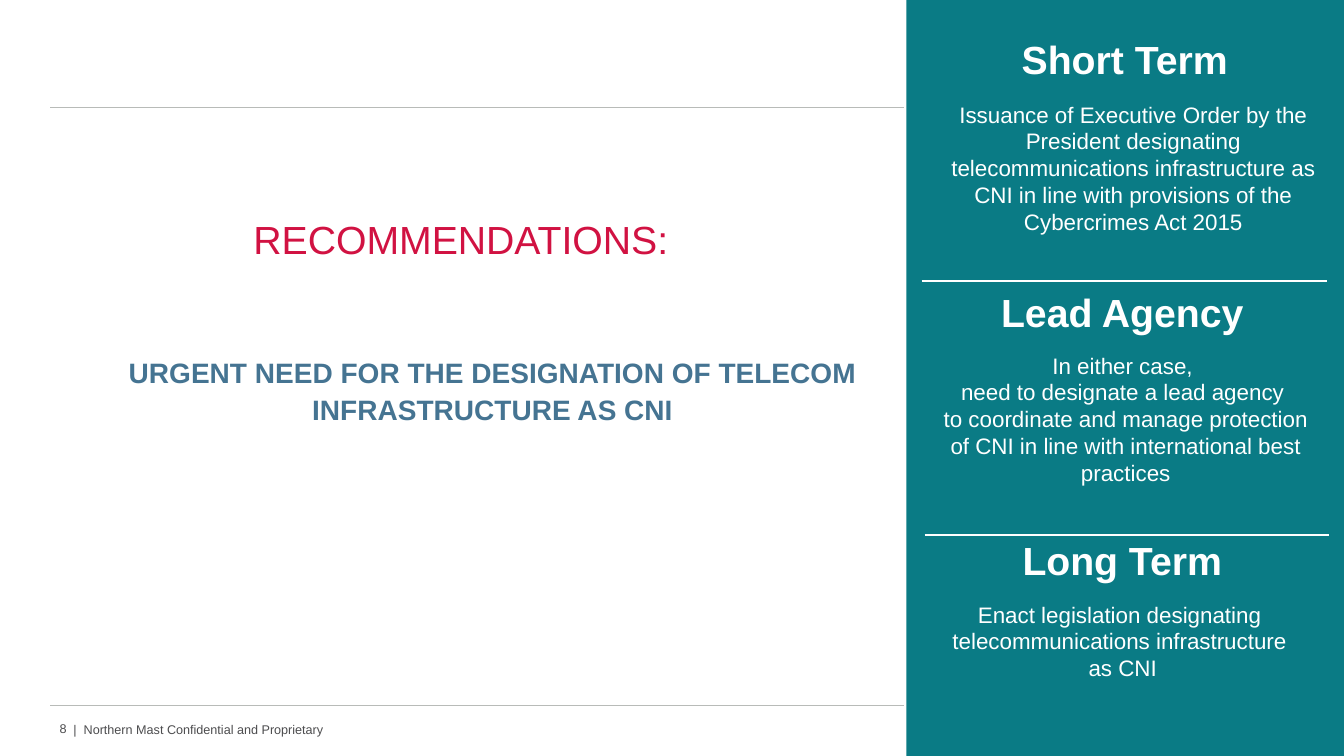
from lxml.etree import SubElement
from pptx import Presentation
from pptx.dml.color import RGBColor as RGB
from pptx.enum.shapes import MSO_CONNECTOR as LINK, MSO_SHAPE as SHAPE
from pptx.enum.text import MSO_ANCHOR as ANCHOR, MSO_AUTO_SIZE as FIT, PP_ALIGN as ALIGN
from pptx.oxml.ns import qn
from pptx.util import Pt

PX = 9144
WHITE = RGB(0xFF, 0xFF, 0xFF)
TEAL = RGB(0x0A, 0x7B, 0x85)
RED = RGB(0xD1, 0x12, 0x42)
BLUE = RGB(0x45, 0x74, 0x92)
GREY = RGB(0x4D, 0x4D, 0x4F)
SILVER = RGB(0xB8, 0xBB, 0xB8)


def place(shape, left, top, width, height):
    shape.left, shape.top = left * PX, top * PX
    shape.width, shape.height = width * PX, height * PX


def write(shape, lines, size, color, bold=False, align=ALIGN.CENTER, anchor=ANCHOR.TOP):
    frame = shape.text_frame
    frame.word_wrap = True
    frame.auto_size = FIT.NONE
    frame.vertical_anchor = anchor
    for i, line in enumerate(lines):
        para = frame.add_paragraph() if i else frame.paragraphs[0]
        para.alignment = align
        run = para.add_run()
        run.text = line
        font = run.font
        font.name, font.size, font.bold = "Arial", Pt(size), bold
        font.color.rgb = color


deck = Presentation()
deck.slide_width, deck.slide_height = 1333 * PX, 750 * PX
slide = deck.slides.add_slide(deck.slide_layouts[2])
shapes = slide.shapes

panel = shapes.add_shape(SHAPE.RECTANGLE, 899 * PX, 0, 434 * PX, 750 * PX)
panel.shadow.inherit = False
panel.fill.solid()
panel.fill.fore_color.rgb = TEAL
panel.line.fill.background()

rules = [
    (50, 897, 107, SILVER, 0.5),
    (50, 897, 700, SILVER, 0.5),
    (914, 1316, 279, WHITE, 1.5),
    (917, 1318, 531, WHITE, 1.5),
]
for start, end, y, color, weight in rules:
    rule = shapes.add_connector(LINK.STRAIGHT, start * PX, y * PX, end * PX, y * PX)
    rule.line.color.rgb = color
    rule.line.width = Pt(weight)
    SubElement(rule._element.spPr, qn("a:effectLst"))

title = shapes.title
place(title, 239, 194, 436, 72)
write(title, ["RECOMMENDATIONS:"], 28, RED, anchor=ANCHOR.BOTTOM)
title.text_frame.paragraphs[0].line_spacing = 0.9

body = slide.placeholders[1]
place(body, 80, 344, 817, 106)
write(body, ["URGENT NEED FOR THE DESIGNATION OF TELECOM INFRASTRUCTURE AS CNI"], 20, BLUE, True)
para = body.text_frame.paragraphs[0]
para.line_spacing = 1.1
para.space_before, para.space_after = Pt(0), Pt(9)

terms = [
    ("Short Term", (1002, 30, 227, 57), (930, 95, 388, 145), [
        "Issuance of Executive Order by the President designating "
        "telecommunications infrastructure as CNI in line with provisions "
        "of the Cybercrimes Act 2015",
    ]),
    ("Lead Agency", (972, 281, 282, 57), (920, 344, 393, 145), [
        "In either case, ",
        "need to designate a lead agency ",
        "to coordinate and manage protection of CNI in line with "
        "international best practices",
    ]),
    ("Long Term", (1002, 527, 222, 57), (912, 591, 403, 91), [
        "Enact legislation designating ",
        "telecommunications infrastructure ",
        "as CNI",
    ]),
]
for head, spot, area, lines in terms:
    for box, words, size, bold in ((spot, [head], 28, True), (area, lines, 16, False)):
        text = shapes.add_textbox(0, 0, 0, 0)
        place(text, *box)
        write(text, words, size, WHITE, bold)

notes = [
    ("8", (36, 713, 40, 20), ALIGN.RIGHT),
    ("|  Northern Mast Confidential and Proprietary", (63, 711, 357, 25), ALIGN.LEFT),
]
for words, box, align in notes:
    text = shapes.add_textbox(0, 0, 0, 0)
    place(text, *box)
    write(text, [words], 9, GREY, align=align, anchor=ANCHOR.MIDDLE)

deck.save("out.pptx")
